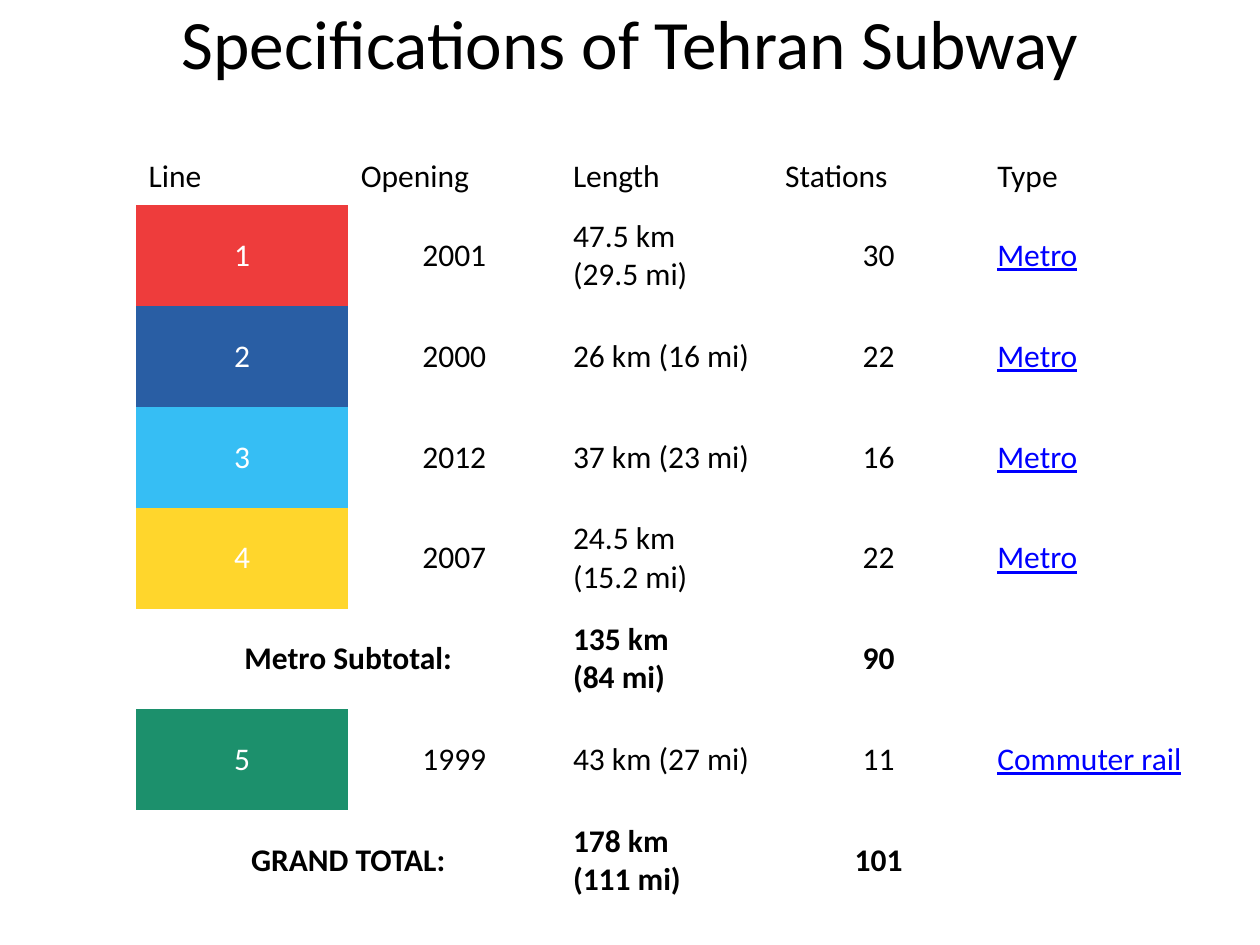
from pptx import Presentation
from pptx.dml.color import RGBColor
from pptx.enum.text import MSO_ANCHOR, PP_ALIGN
from pptx.oxml.ns import qn
from pptx.util import Inches, Pt

BLACK = RGBColor(0x00, 0x00, 0x00)
WHITE = RGBColor(0xFF, 0xFF, 0xFF)
LINK_BLUE = RGBColor(0x00, 0x00, 0xFF)
RED = RGBColor(0xEE, 0x3C, 0x3C)
NAVY = RGBColor(0x29, 0x5E, 0xA4)
SKY = RGBColor(0x36, 0xBE, 0xF4)
YELLOW = RGBColor(0xFF, 0xD6, 0x2C)
GREEN = RGBColor(0x1C, 0x90, 0x6C)

FONT = "Calibri"
NO_GRID_STYLE = "{2D5ABB26-0587-4C30-8999-92F81FD0307C}"
NBSP = chr(160)
CENTERED_COLUMNS = (0, 1, 3)

headings = ["Line", "Opening", "Length", "Stations", "Type"]
services = [
    ("1", "2001", "47.5", "29.5", "30", "Metro", RED),
    ("2", "2000", "26", "16", "22", "Metro", NAVY),
    ("3", "2012", "37", "23", "16", "Metro", SKY),
    ("4", "2007", "24.5", "15.2", "22", "Metro", YELLOW),
    ("Metro Subtotal:", "", "135", "84", "90", "", None),
    ("5", "1999", "43", "27", "11", "Commuter rail", GREEN),
    ("GRAND TOTAL:", "", "178", "111", "101", "", None),
]


def write(cell, text, color=BLACK, align=PP_ALIGN.LEFT, bold=False, underline=False):
    cell.vertical_anchor = MSO_ANCHOR.MIDDLE
    paragraph = cell.text_frame.paragraphs[0]
    paragraph.text = text
    paragraph.alignment = align
    font = paragraph.runs[0].font
    font.name = FONT
    font.size = Pt(18)
    font.color.rgb = color
    font.bold = bold
    font.underline = underline


prs = Presentation()
prs.slide_width = Inches(10)
prs.slide_height = Inches(7.5)
slide = prs.slides.add_slide(prs.slide_layouts[6])

title = slide.shapes.add_textbox(Inches(0.5), Inches(0), Inches(9), Inches(1.25))
title.text_frame.word_wrap = True
title.text_frame.margin_top = Inches(0)
heading = title.text_frame.paragraphs[0]
heading.text = "Specifications of Tehran Subway"
heading.alignment = PP_ALIGN.CENTER
heading.runs[0].font.name = FONT
heading.runs[0].font.size = Pt(39.6)
heading.runs[0].font.color.rgb = BLACK

lines = slide.shapes.add_table(
    len(services) + 1, len(headings), Inches(1.08), Inches(1.17), Inches(8.42), Inches(6.04)
).table
lines.first_row = False
lines.horz_banding = False
lines._tbl.tblPr.find(qn("a:tableStyleId")).text = NO_GRID_STYLE

for column in lines.columns:
    column.width = Inches(8.42 / len(headings))
for index, row in enumerate(lines.rows):
    row.height = Inches(0.8 if index else 0.46)
for cell in lines.iter_cells():
    cell.fill.background()

for column, label in enumerate(headings):
    write(lines.cell(0, column), label)

for row, (name, opening, km, miles, stations, kind, color) in enumerate(services, start=1):
    is_total = color is None
    if is_total:
        lines.cell(row, 0).merge(lines.cell(row, 1))
    else:
        lines.cell(row, 0).fill.solid()
        lines.cell(row, 0).fill.fore_color.rgb = color
    length = f"{km}{NBSP}km ({miles}{NBSP}mi)"
    for column, text in enumerate([name, opening, length, stations, kind]):
        if not text:
            continue
        is_link = column == 4
        text_color = LINK_BLUE if is_link else WHITE if column == 0 and not is_total else BLACK
        align = PP_ALIGN.CENTER if column in CENTERED_COLUMNS else PP_ALIGN.LEFT
        write(lines.cell(row, column), text, text_color, align, is_total, is_link)

prs.save("out.pptx")
